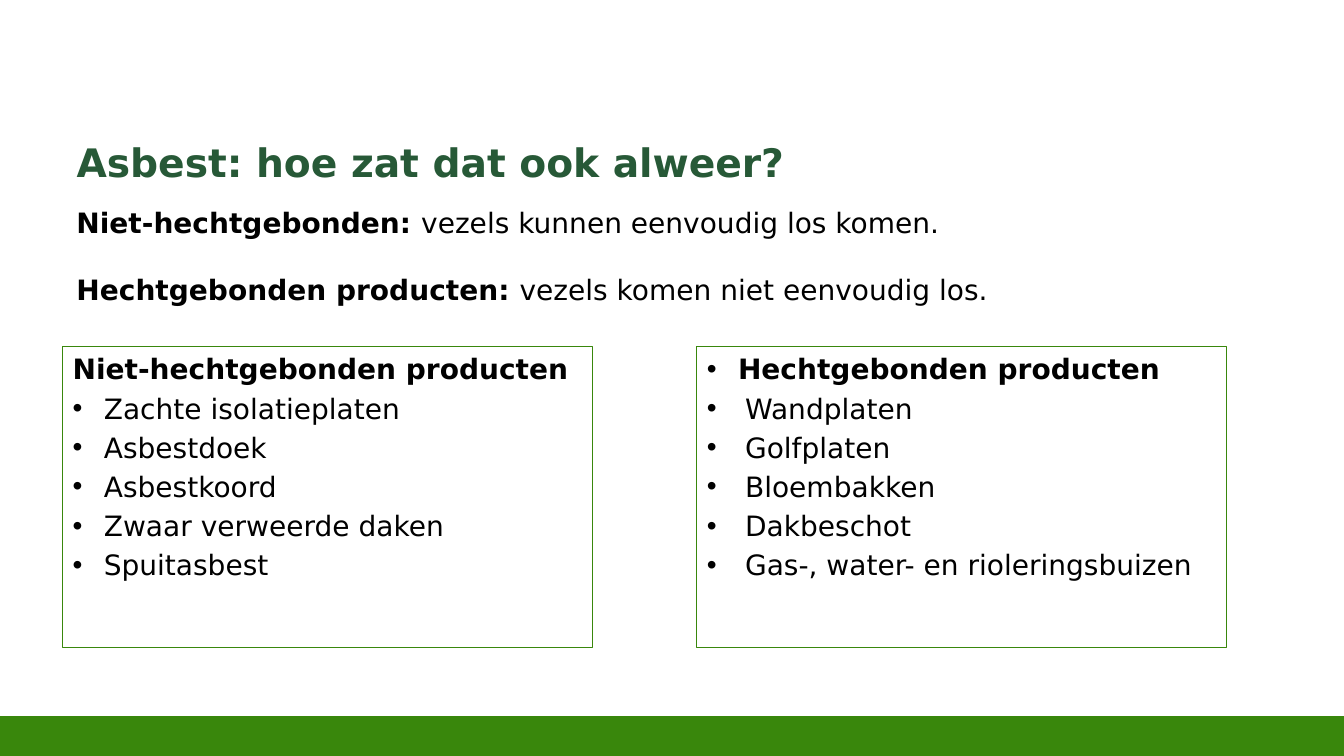
from lxml import etree
from pptx import Presentation
from pptx.dml.color import RGBColor
from pptx.enum import shapes, text
from pptx.oxml import ns
from pptx.util import Inches, Pt

FONT = "DejaVu Sans"
GREEN = RGBColor(0x39, 0x87, 0x0C)
DARK = RGBColor(0x27, 0x59, 0x37)
BLACK = RGBColor(0, 0, 0)

LOOSE = ["Niet-hechtgebonden producten", "Zachte isolatieplaten", "Asbestdoek",
         "Asbestkoord", "Zwaar verweerde daken", "Spuitasbest"]
BOUND = ["Hechtgebonden producten", "Wandplaten", "Golfplaten", "Bloembakken",
         "Dakbeschot", "Gas-, water- en rioleringsbuizen"]
TERMS = [("Niet-hechtgebonden: ", "vezels kunnen eenvoudig los komen."),
         ("Hechtgebonden producten: ", "vezels komen niet eenvoudig los.")]


def place(shape, left, top, width, height):
    shape.left, shape.top = Inches(left), Inches(top)
    shape.width, shape.height = Inches(width), Inches(height)


def style(font, size, color=BLACK, bold=None):
    font.name, font.size, font.bold = FONT, Pt(size), bold
    font.color.rgb = color


def bullet(para, indent):
    """Set a hanging bullet, or none where indent is 0."""
    props = para._p.get_or_add_pPr()
    props.set("marL", str(Inches(indent)))
    props.set("indent", str(-Inches(indent)))
    if indent:
        etree.SubElement(props, ns.qn("a:buFont"), typeface="Arial")
        etree.SubElement(props, ns.qn("a:buChar"), char="•")
    else:
        etree.SubElement(props, ns.qn("a:buNone"))


def add_bar(slide):
    bar = slide.shapes.add_shape(shapes.MSO_SHAPE.RECTANGLE, Inches(0),
                                 Inches(7.12), Inches(13.33), Inches(0.39))
    bar.shadow.inherit = False
    bar.fill.solid()
    bar.fill.fore_color.rgb = bar.line.color.rgb = GREEN
    bar.line.width = Pt(2)


def set_title(shape, words):
    place(shape, 0.66, 1.28, 12, 0.73)
    frame = shape.text_frame
    frame.text = words
    frame.auto_size = text.MSO_AUTO_SIZE.NONE
    frame.vertical_anchor = text.MSO_ANCHOR.TOP
    frame.margin_top = Inches(0.09)
    para = frame.paragraphs[0]
    para.alignment = text.PP_ALIGN.LEFT
    style(para.font, 28, DARK, True)


def set_list(shape, left, items, head, hang):
    """Fill a framed list; head and hang indent its heading and items."""
    place(shape, left, 3.44, 5.26, 2.98)
    shape.line.color.rgb = GREEN
    shape.line.width = Pt(0.75)
    frame = shape.text_frame
    frame.text = "\n".join(items)
    frame.auto_size = text.MSO_AUTO_SIZE.NONE
    for i, para in enumerate(frame.paragraphs):
        para.line_spacing = Pt(24)
        para.space_before = Pt(4 if i else 0)
        bullet(para, hang if i else head)
        style(para.font, 20, bold=i == 0)


def add_terms(slide):
    box = slide.shapes.add_textbox(Inches(0.66), Inches(1.99),
                                   Inches(9.26), Inches(1.45))
    frame = box.text_frame
    frame.word_wrap = False
    for i, (term, sense) in enumerate(TERMS):
        para = frame.add_paragraph() if i else frame.paragraphs[0]
        para.space_before = Pt(24 if i else 0)
        style(para.font, 20)
        for words, bold in ((term, True), (sense, False)):
            run = para.add_run()
            run.text = words
            run.font.bold = bold


def main():
    deck = Presentation()
    deck.slide_width, deck.slide_height = Inches(13.33), Inches(7.5)
    slide = deck.slides.add_slide(deck.slide_layouts.get_by_name("Two Content"))
    title, loose, bound = slide.placeholders

    # Title and definitions
    set_title(title, "Asbest: hoe zat dat ook alweer?")
    add_terms(slide)

    # Product lists
    set_list(loose, 0.62, LOOSE, 0, 0.31)
    set_list(bound, 6.91, BOUND, 0.31, 0.38)

    # Footer bar
    add_bar(slide)
    deck.save("out.pptx")


if __name__ == "__main__":
    main()
